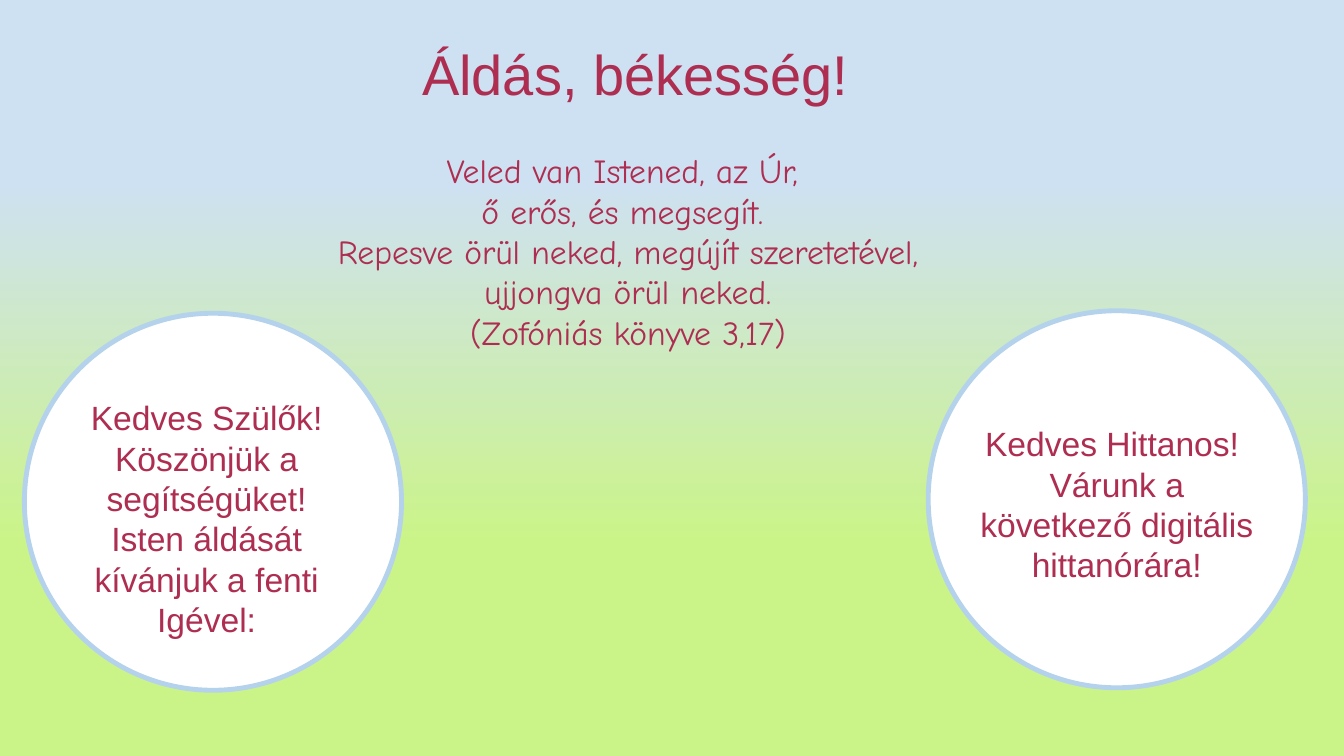
"""Build a blessing slide with a verse and two round greetings."""
from dataclasses import dataclass
from typing import Any

from lxml import etree
from pptx import Presentation
from pptx.dml.color import RGBColor
from pptx.enum.shapes import MSO_SHAPE
from pptx.enum.text import MSO_ANCHOR, MSO_AUTO_SIZE, PP_ALIGN
from pptx.oxml.ns import qn
from pptx.util import Inches, Pt

OVAL = MSO_SHAPE.OVAL
TOP = MSO_ANCHOR.TOP
GROW = MSO_AUTO_SIZE.SHAPE_TO_FIT_TEXT
CENTER = PP_ALIGN.CENTER
COLS = 16
WIDE, HIGH = Inches(13.33), Inches(7.5)
CELL = WIDE / COLS


@dataclass(frozen=True)
class Theme:
    """Colours, fonts and sizes of the slide."""
    ink: RGBColor = RGBColor.from_string("AE2E51")
    paper: RGBColor = RGBColor.from_string("FFFFFF")
    rim: RGBColor = RGBColor.from_string("B5D2EC")
    grass: RGBColor = RGBColor.from_string("CBF488")
    sky: RGBColor = RGBColor.from_string("CEE1F2")
    sans: str = "Arial"
    hand: str = "Comic Neue"
    head: Pt = Pt(40)
    text: Pt = Pt(24)
    edge: Pt = Pt(3.5)


@dataclass(frozen=True)
class Box:
    """A place on the grid, in columns and rows."""
    col: float
    row: float
    wide: float
    high: float


@dataclass(frozen=True)
class Bubble:
    """A round greeting: its disc, its text place and its lines."""
    disc: Box
    note: Box
    lines: tuple[str, ...]


THEME = Theme()
DISC = 4.49
TITLE = Box(3.47, 0.41, 8, 0.92)
VERSE = Box(3.16, 1.73, 8.63, 2.54)
LINES = (
    "Veled van Istened, az Úr, ",
    "ő erős, és megsegít. ",
    "Repesve örül neked, megújít szeretetével, ujjongva örül neked.",
    "(Zofóniás könyve 3,17)",
)
BUBBLES = (
    Bubble(Box(11.05, 3.7, DISC, DISC), Box(11.46, 4.98, 3.67, 2.06),
           ("Kedves Hittanos! ", "Várunk a következő digitális hittanórára!")),
    Bubble(Box(0.29, 3.73, DISC, DISC), Box(0.43, 4.67, 4.06, 3.02),
           ("Kedves Szülők!", "Köszönjük a segítségüket!",
            "Isten áldását kívánjuk a fenti Igével:")),
)
FRAME = {"word_wrap": True, "auto_size": GROW, "vertical_anchor": TOP}
PARA = {"alignment": CENTER, "space_before": Pt(0), "line_spacing": 1.0}


def apply(item: Any, form: dict[str, Any]) -> None:
    """Set each named value on the item."""
    for name, value in form.items():
        setattr(item, name, value)


def span(box: Box) -> tuple[int, ...]:
    """Turn grid units into slide lengths."""
    return tuple(round(n * CELL) for n in (box.col, box.row, box.wide, box.high))


def place(shape: Any, box: Box) -> None:
    """Move and size a placeholder."""
    apply(shape, dict(zip(("left", "top", "width", "height"), span(box))))


def write(shape: Any, lines: tuple[str, ...], font: str, size: Pt) -> None:
    """Fill a shape with centred lines without bullets."""
    frame = shape.text_frame
    apply(frame, FRAME)
    for i, line in enumerate(lines):
        para = frame.add_paragraph() if i else frame.paragraphs[0]
        apply(para, PARA)
        props = para._p.get_or_add_pPr()
        props.set("marL", "0")
        props.set("indent", "0")
        etree.SubElement(props, qn("a:buNone"))
        run = para.add_run()
        run.text = line
        apply(run.font, {"name": font, "size": size})
        run.font.color.rgb = THEME.ink


def shade(slide: Any) -> None:
    """Blend the background from grass up to sky."""
    fill = slide.background.fill
    fill.gradient()
    fill.gradient_angle = 90
    tones = ((0.28, THEME.grass), (0.76, THEME.sky))
    for stop, (share, tone) in zip(fill.gradient_stops, tones):
        stop.position = share
        stop.color.rgb = tone


def draw(slide: Any, bubble: Bubble) -> None:
    """Add one disc and the greeting on it."""
    disc = slide.shapes.add_shape(OVAL, *span(bubble.disc))
    disc.shadow.inherit = False
    disc.fill.solid()
    disc.fill.fore_color.rgb = THEME.paper
    disc.line.color.rgb = THEME.rim
    disc.line.width = THEME.edge
    note = slide.shapes.add_textbox(*span(bubble.note))
    write(note, bubble.lines, THEME.sans, THEME.text)


def main() -> None:
    """Build and save the slide."""
    deck = Presentation()
    apply(deck, {"slide_width": WIDE, "slide_height": HIGH})
    slide = deck.slides.add_slide(deck.slide_layouts[1])
    shade(slide)
    title, verse = slide.placeholders
    place(title, TITLE)
    write(title, (" Áldás, békesség!",), THEME.sans, THEME.head)
    place(verse, VERSE)
    write(verse, LINES, THEME.hand, THEME.text)
    for bubble in BUBBLES:
        draw(slide, bubble)
    deck.save("out.pptx")


if __name__ == "__main__":
    main()
